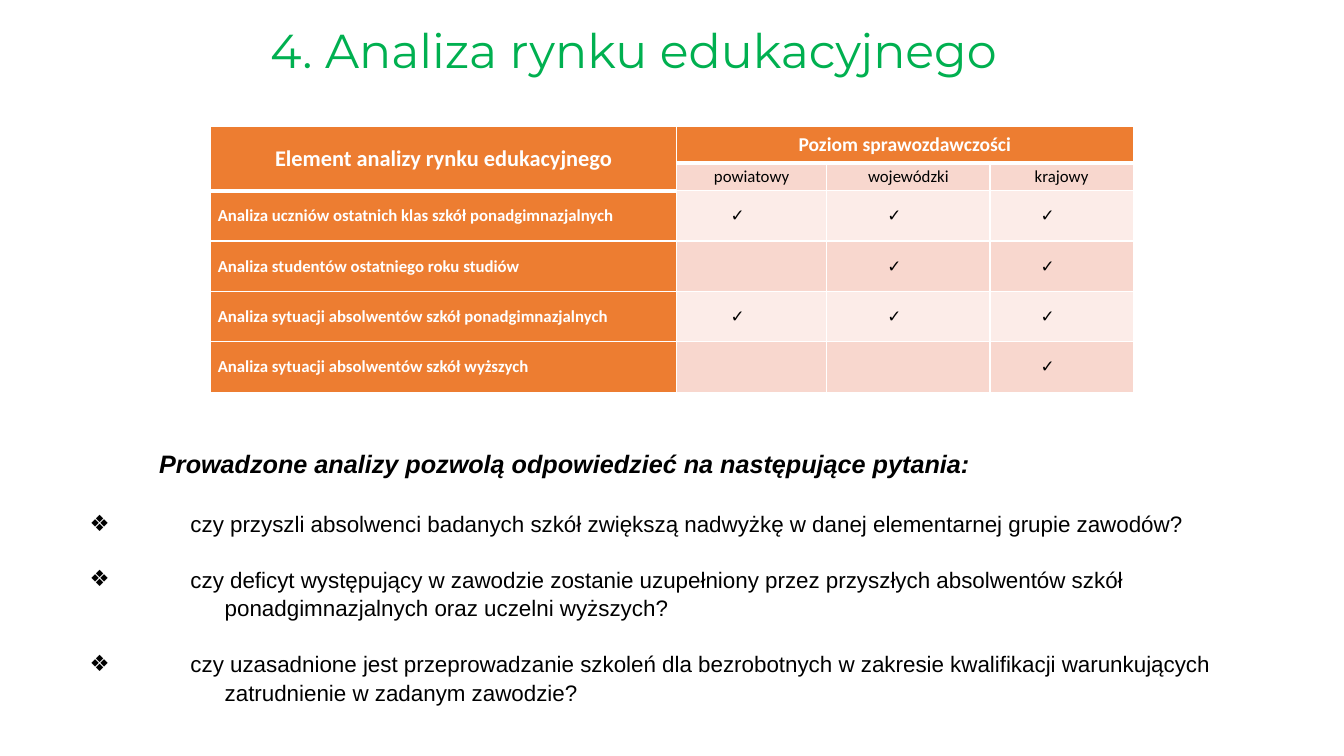
from dataclasses import dataclass
from lxml.etree import SubElement as Sub
from pptx import Presentation
from pptx.dml.color import RGBColor as Rgb
from pptx.enum.text import MSO_ANCHOR as Anchor, MSO_AUTO_SIZE as Fit, PP_ALIGN as Align
from pptx.oxml.ns import qn
from pptx.util import Inches, Pt


@dataclass(frozen=True)
class Theme:
    green: str = "00B050"
    orange: str = "ED7D31"
    rose: str = "F8D7CE"
    pale: str = "FCECE8"
    white: str = "FFFFFF"
    black: str = "000000"
    head: str = "Montserrat"
    grid: str = "Calibri"
    body: str = "Arial"
    title: int = 34
    lead: int = 18
    text: int = 16
    level: int = 14
    small: int = 12


T = Theme()
COLS = (4.62, 1.49, 1.62, 1.42)
ROWS = (0.37, 0.25, 0.5, 0.5, 0.5, 0.5)
HEADS = (("Element analizy rynku edukacyjnego", T.text),
         ("Poziom sprawozdawczości", T.level))
LEVELS = ("powiatowy", "wojewódzki", "krajowy")
ITEMS = (
    ("Analiza uczniów ostatnich klas szkół ponadgimnazjalnych", (1, 2, 3)),
    ("Analiza studentów ostatniego roku studiów", (2, 3)),
    ("Analiza sytuacji absolwentów szkół ponadgimnazjalnych", (1, 2, 3)),
    ("Analiza sytuacji absolwentów szkół wyższych", (3,)),
)
LEAD = "Prowadzone analizy pozwolą odpowiedzieć na następujące pytania:"
ASKS = (
    ("czy przyszli absolwenci badanych szkół zwiększą nadwyżkę w danej elementarnej grupie zawodów?",),
    ("czy deficyt występujący w zawodzie zostanie uzupełniony przez przyszłych absolwentów szkół",
     "ponadgimnazjalnych oraz uczelni wyższych?"),
    ("czy uzasadnione jest przeprowadzanie szkoleń dla bezrobotnych w zakresie kwalifikacji warunkujących",
     "zatrudnienie w zadanym zawodzie?"),
)


def write(para, text, size, font=T.body, color=T.black, bold=False,
          italic=False, align=Align.LEFT, line=1.0, before=0):
    para.alignment = align
    para.line_spacing = line
    para.space_before = Pt(before)
    run = para.add_run()
    run.text = text
    face = run.font
    face.size, face.name, face.bold, face.italic = Pt(size), font, bold, italic
    face.color.rgb = Rgb.from_string(color)


def indent(para, left, first=0, mark=None):
    props = para._p.get_or_add_pPr()
    props.set("marL", str(Inches(left)))
    props.set("indent", str(Inches(first)))
    if mark:
        Sub(props, qn("a:buFont"), typeface=T.body)
        Sub(props, qn("a:buChar"), char=mark)


def border(cell, base=1):
    props = cell._tc.get_or_add_tcPr()
    sides = (("L", 1), ("R", 1), ("T", 1), ("B", base))
    for spot, (side, width) in enumerate(sides):
        line = props.makeelement(qn(f"a:ln{side}"), {"w": str(Pt(width))})
        Sub(Sub(line, qn("a:solidFill")), qn("a:srgbClr"), val=T.white)
        props.insert(spot, line)


def fill(cell, shade, text="", size=T.small, base=1, **style):
    cell.fill.solid()
    cell.fill.fore_color.rgb = Rgb.from_string(shade)
    cell.vertical_anchor = Anchor.MIDDLE
    cell.margin_left = cell.margin_right = Inches(0.07)
    cell.margin_top = cell.margin_bottom = 0
    border(cell, base)
    if text:
        write(cell.text_frame.paragraphs[0], text, size, font=T.grid, **style)


def heading(slide, box):
    shape = slide.shapes.title
    shape.left, shape.top, shape.width, shape.height = map(Inches, box)
    frame = shape.text_frame
    frame.word_wrap, frame.auto_size = True, Fit.NONE
    frame.vertical_anchor = Anchor.MIDDLE
    write(frame.paragraphs[0], "4. Analiza rynku edukacyjnego", T.title,
          font=T.head, color=T.green, line=0.9)


def matrix(slide, box):
    table = slide.shapes.add_table(len(ROWS), len(COLS), *map(Inches, box)).table
    for col, width in zip(table.columns, COLS):
        col.width = Inches(width)
    for row, height in zip(table.rows, ROWS):
        row.height = Inches(height)
    table.cell(0, 0).merge(table.cell(1, 0))
    table.cell(0, 1).merge(table.cell(0, 3))
    for col, (text, size) in enumerate(HEADS):
        fill(table.cell(0, col), T.orange, text, size, base=3,
             color=T.white, bold=True, align=Align.CENTER)
    for row, col in ((1, 0), (0, 2), (0, 3)):
        border(table.cell(row, col), 3)
    for col, text in enumerate(LEVELS, 1):
        fill(table.cell(1, col), T.rose, text, align=Align.CENTER)
    for row, (text, marks) in enumerate(ITEMS, 2):
        fill(table.cell(row, 0), T.orange, text, color=T.white, bold=True)
        for col in range(1, len(COLS)):
            cell = table.cell(row, col)
            shade = T.rose if row % 2 else T.pale
            if col in marks:
                fill(cell, shade, " ", align=Align.CENTER)
                indent(cell.text_frame.paragraphs[0], 0.38, -0.38, "✓")
            else:
                fill(cell, shade)


def queries(slide, box):
    frame = slide.shapes.add_textbox(*map(Inches, box)).text_frame
    frame.word_wrap = True
    lead = frame.paragraphs[0]
    write(lead, LEAD, T.lead, bold=True, italic=True, line=1.07)
    indent(lead, 0.69)
    for spot, (ask, *rest) in enumerate(ASKS):
        para = frame.add_paragraph()
        write(para, ask, T.text, line=1.07, before=19.2 if spot else 21)
        indent(para, 1, -1, "❖")
        for text in rest:
            para = frame.add_paragraph()
            write(para, text, T.text, line=1.07)
            indent(para, 1.34)


def main():
    deck = Presentation()
    deck.slide_width, deck.slide_height = Inches(13.33), Inches(7.5)
    slide = deck.slides.add_slide(deck.slide_layouts[5])
    heading(slide, (2.58, 0.18, 8.18, 0.69))
    matrix(slide, (2.09, 1.25, sum(COLS), sum(ROWS)))
    queries(slide, (0.79, 4.38, 11.68, 2.71))
    deck.save("out.pptx")


if __name__ == "__main__":
    main()
